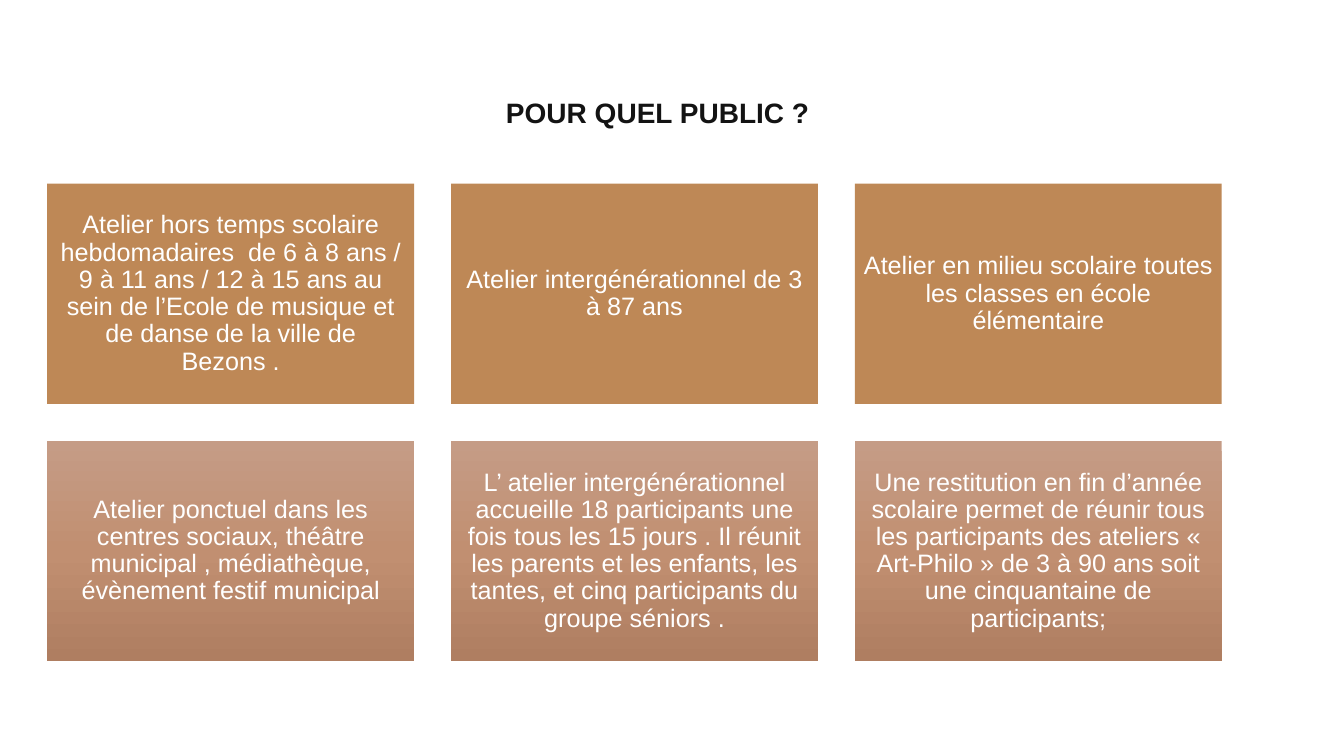
from copy import deepcopy
from dataclasses import dataclass

from pptx import Presentation
from pptx.dml.color import RGBColor
from pptx.enum.shapes import MSO_SHAPE
from pptx.enum.text import MSO_ANCHOR, MSO_AUTO_SIZE, PP_ALIGN
from pptx.oxml.ns import qn
from pptx.util import Cm, Pt


@dataclass(frozen=True)
class Theme:
    font: str = "Arial"
    title_size: int = 20
    card_size: int = 18
    title_color: str = "131313"
    card_color: str = "FFFFFF"
    workshop_fill: tuple = ((0, "BE8856"),)
    event_fill: tuple = ((0, "C59C86"), (0.5, "C18F71"), (1, "AF7E61"))


THEME = Theme()
TITLE = "POUR QUEL PUBLIC ?"
AUDIENCES = (
    (THEME.workshop_fill, (
        "Atelier hors temps scolaire hebdomadaires  de 6 à 8 ans / 9 à 11 ans / "
        "12 à 15 ans au sein de l’Ecole de musique et de danse de la ville de Bezons .",
        "Atelier intergénérationnel de 3 à 87 ans",
        "Atelier en milieu scolaire toutes les classes en école élémentaire",
    )),
    (THEME.event_fill, (
        "Atelier ponctuel dans les centres sociaux, théâtre municipal , médiathèque, "
        "évènement festif municipal",
        "L’ atelier intergénérationnel accueille 18 participants une fois tous les "
        "15 jours . Il réunit les parents et les enfants, les tantes, et cinq "
        "participants du groupe séniors .",
        "Une restitution en fin d’année scolaire permet de réunir tous les participants "
        "des ateliers « Art-Philo » de 3 à 90 ans soit une cinquantaine de participants;",
    )),
)


def apply(target, formats):
    for attribute, value in formats.items():
        setattr(target, attribute, value)


def write(frame, text, size, color, bold, alignment, frame_formats):
    frame.text = text
    apply(frame, {"word_wrap": True, "auto_size": MSO_AUTO_SIZE.NONE, **frame_formats})
    paragraph = frame.paragraphs[0]
    apply(paragraph, {"alignment": alignment, "line_spacing": 0.9})
    font = paragraph.runs[0].font
    apply(font, {"name": THEME.font, "size": Pt(size), "bold": bold})
    font.color.rgb = RGBColor.from_string(color)


def paint(shape, stops):
    """Fill with one plain colour, or with a gradient running downwards."""
    fill = shape.fill
    if len(stops) == 1:
        fill.solid()
        fill.fore_color.rgb = RGBColor.from_string(stops[0][1])
        return
    fill.gradient()
    fill.gradient_angle = 270
    stop_list = next(shape.element.iter(qn("a:gsLst")))
    while len(stop_list) < len(stops):
        stop_list.insert(1, deepcopy(stop_list[0]))
    for stop, (position, color) in zip(fill.gradient_stops, stops):
        stop.position = position
        stop.color.rgb = RGBColor.from_string(color)


def place_title(slide, left, top, width, height):
    title = slide.shapes.title
    apply(title, {"left": left, "top": top, "width": width, "height": height})
    write(title.text_frame, TITLE, THEME.title_size, THEME.title_color, True, PP_ALIGN.LEFT, {
        "vertical_anchor": MSO_ANCHOR.BOTTOM,
        "margin_left": Cm(11.56),
        "margin_bottom": Cm(0.22),
    })


def place_card(slide, text, stops, left, top, width, height):
    card = slide.shapes.add_shape(MSO_SHAPE.RECTANGLE, left, top, width, height)
    card.shadow.inherit = False
    card.line.fill.background()
    paint(card, stops)
    margins = {f"margin_{side}": Cm(0.18) for side in ("left", "top", "right", "bottom")}
    write(card.text_frame, text, THEME.card_size, THEME.card_color, False, PP_ALIGN.CENTER,
          {"vertical_anchor": MSO_ANCHOR.MIDDLE, **margins})


def place_audiences(slide, left, top, width, height, gap):
    """Share the box out evenly between the rows and columns of cards."""
    rows, columns = len(AUDIENCES), len(AUDIENCES[0][1])
    card_width = (width - gap * (columns - 1)) // columns
    card_height = (height - gap * (rows - 1)) // rows
    for row, (stops, texts) in enumerate(AUDIENCES):
        for column, text in enumerate(texts):
            place_card(slide, text, stops,
                       left + column * (card_width + gap), top + row * (card_height + gap),
                       card_width, card_height)


def main():
    presentation = Presentation()
    apply(presentation, {"slide_width": Cm(33.87), "slide_height": Cm(19.05)})
    slide = presentation.slides.add_slide(presentation.slide_layouts[5])
    left, width = Cm(1.19), Cm(29.6)
    place_title(slide, left, Cm(0.79), width, Cm(2.69))
    place_audiences(slide, left, Cm(4.63), width, Cm(12.03), Cm(0.93))
    presentation.save("out.pptx")


if __name__ == "__main__":
    main()
